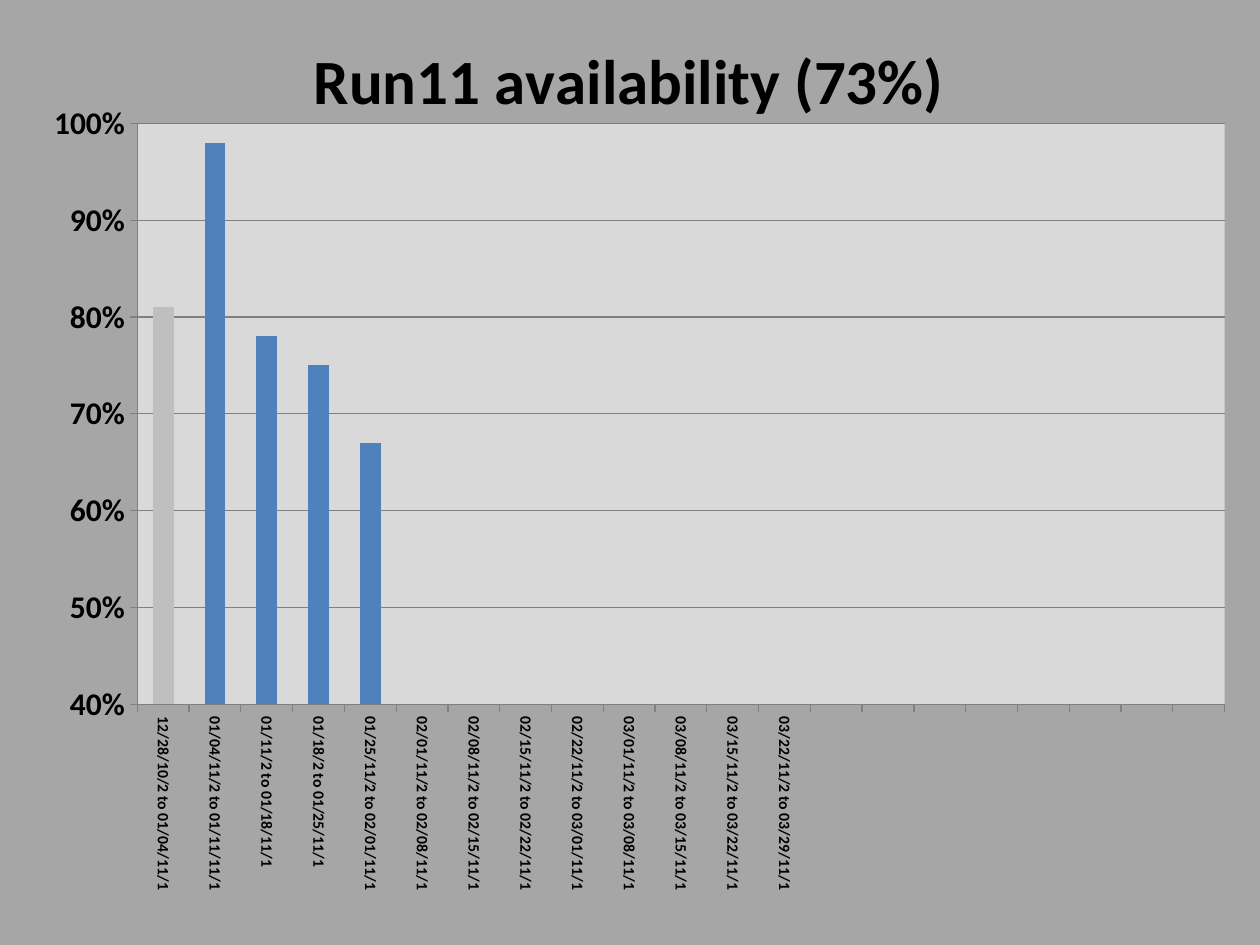
from dataclasses import dataclass

from lxml import etree
from pptx import Presentation
from pptx.chart.data import CategoryChartData
from pptx.dml.color import RGBColor
from pptx.enum.chart import XL_CHART_TYPE, XL_TICK_MARK
from pptx.oxml import parse_xml
from pptx.oxml.ns import nsdecls, qn
from pptx.util import Inches, Pt


@dataclass(frozen=True)
class Theme:
    font: str = "Calibri"
    text: str = "000000"
    back: str = "A6A6A6"
    plot: str = "D9D9D9"
    line: str = "808080"
    bar: str = "4F81BD"
    muted: str = "BFBFBF"
    base_size: int = 10
    title_size: int = 36
    value_size: int = 18
    week_size: int = 9


# Weekly availability; the last columns are left free
WEEKS = [
    "12/28/10/2 to 01/04/11/1", "01/04/11/2 to 01/11/11/1",
    "01/11/2 to 01/18/11/1", "01/18/2 to 01/25/11/1",
    "01/25/11/2 to 02/01/11/1", "02/01/11/2 to 02/08/11/1",
    "02/08/11/2 to 02/15/11/1", "02/15/11/2 to 02/22/11/1",
    "02/22/11/2 to 03/01/11/1", "03/01/11/2 to 03/08/11/1",
    "03/08/11/2 to 03/15/11/1", "03/15/11/2 to 03/22/11/1",
    "03/22/11/2 to 03/29/11/1",
]
MEASURED = [0.81, 0.98, 0.78, 0.75, 0.67]
FREE_COLUMNS = 8


class Deck:
    def __init__(self, theme):
        self.theme = theme
        self.prs = Presentation()
        self.prs.slide_width, self.prs.slide_height = Inches(10), Inches(7.5)
        self.s = self.prs.slides.add_slide(self.prs.slide_layouts[6])

    def style_font(self, font, size, bold=True):
        font.name, font.size, font.bold = self.theme.font, Pt(size), bold
        font.color.rgb = RGBColor.from_string(self.theme.text)

    def fill_xml(self, color):
        return parse_xml(
            f'<c:spPr {nsdecls("c", "a")}><a:solidFill><a:srgbClr val="{color}"/>'
            "</a:solidFill><a:ln><a:noFill/></a:ln></c:spPr>")

    def place(self, parent, index, left, top, width=None, height=None):
        """Give a part of the full-slide chart a manual layout."""
        layout = parent.find(qn("c:layout"))
        if layout is not None:
            parent.remove(layout)
        full_w, full_h = self.prs.slide_width, self.prs.slide_height
        values = {"xMode": "edge", "yMode": "edge",
                  "x": left / full_w, "y": top / full_h}
        if width is not None:
            values = {"layoutTarget": "inner", **values,
                      "w": width / full_w, "h": height / full_h}
        layout = etree.Element(qn("c:layout"))
        manual = etree.SubElement(layout, qn("c:manualLayout"))
        for name, value in values.items():
            etree.SubElement(manual, qn(f"c:{name}")).set("val", str(value))
        parent.insert(index, layout)

    def column_chart(self, weeks, values):
        data = CategoryChartData(number_format="0%")
        data.categories = weeks
        data.add_series("Series 1", values)
        chart = self.s.shapes.add_chart(
            XL_CHART_TYPE.COLUMN_CLUSTERED, 0, 0,
            self.prs.slide_width, self.prs.slide_height, data).chart
        chart.has_legend = False
        self.style_font(chart.font, self.theme.base_size, False)

        # Columns, the first one muted
        plot = chart.plots[0]
        plot.gap_width, plot.vary_by_categories = 150, False
        series = plot.series[0]
        for part, color in ((series, self.theme.bar),
                            (series.points[0], self.theme.muted)):
            part.format.fill.solid()
            part.format.fill.fore_color.rgb = RGBColor.from_string(color)

        # Backgrounds and plot position
        root = chart.element
        root.find(qn("c:chart")).addnext(self.fill_xml(self.theme.back))
        area = root.find(".//" + qn("c:plotArea"))
        area.append(self.fill_xml(self.theme.plot))
        self.place(area, 0, Inches(1.09), Inches(0.98), Inches(8.63), Inches(4.61))
        return chart

    def chart_title(self, chart, text):
        tf = chart.chart_title.text_frame
        r = tf.paragraphs[0].add_run()
        r.text = text
        self.style_font(r.font, self.theme.title_size)
        title = chart.element.find(".//" + qn("c:title"))
        self.place(title, 1, Inches(2.4), Inches(0.2))

    def line(self, fmt):
        fmt.line.color.rgb = RGBColor.from_string(self.theme.line)
        fmt.line.width = Pt(0.75)

    def axes(self, chart):
        value, week = chart.value_axis, chart.category_axis
        for axis, size in ((value, self.theme.value_size),
                           (week, self.theme.week_size)):
            axis.major_tick_mark = XL_TICK_MARK.OUTSIDE
            axis.minor_tick_mark = XL_TICK_MARK.NONE
            self.style_font(axis.tick_labels.font, size)
            self.line(axis.format)
        value.minimum_scale, value.maximum_scale = 0.4, 1
        value.major_unit = 0.1
        value.tick_labels.number_format = "0%"
        value.tick_labels.number_format_is_linked = False
        value.has_major_gridlines = True
        self.line(value.major_gridlines.format)
        # Week labels read downwards
        body = chart.element.find(f'.//{qn("c:catAx")}/{qn("c:txPr")}/{qn("a:bodyPr")}')
        body.set("rot", "5400000")
        body.set("vert", "horz")


def main():
    deck = Deck(Theme())
    weeks = WEEKS + [""] * FREE_COLUMNS
    values = (MEASURED + [0] * (len(WEEKS) - len(MEASURED))
              + [None] * FREE_COLUMNS)
    chart = deck.column_chart(weeks, values)
    deck.chart_title(chart, "Run11 availability (73%)")
    deck.axes(chart)
    deck.prs.save("out.pptx")


if __name__ == "__main__":
    main()
